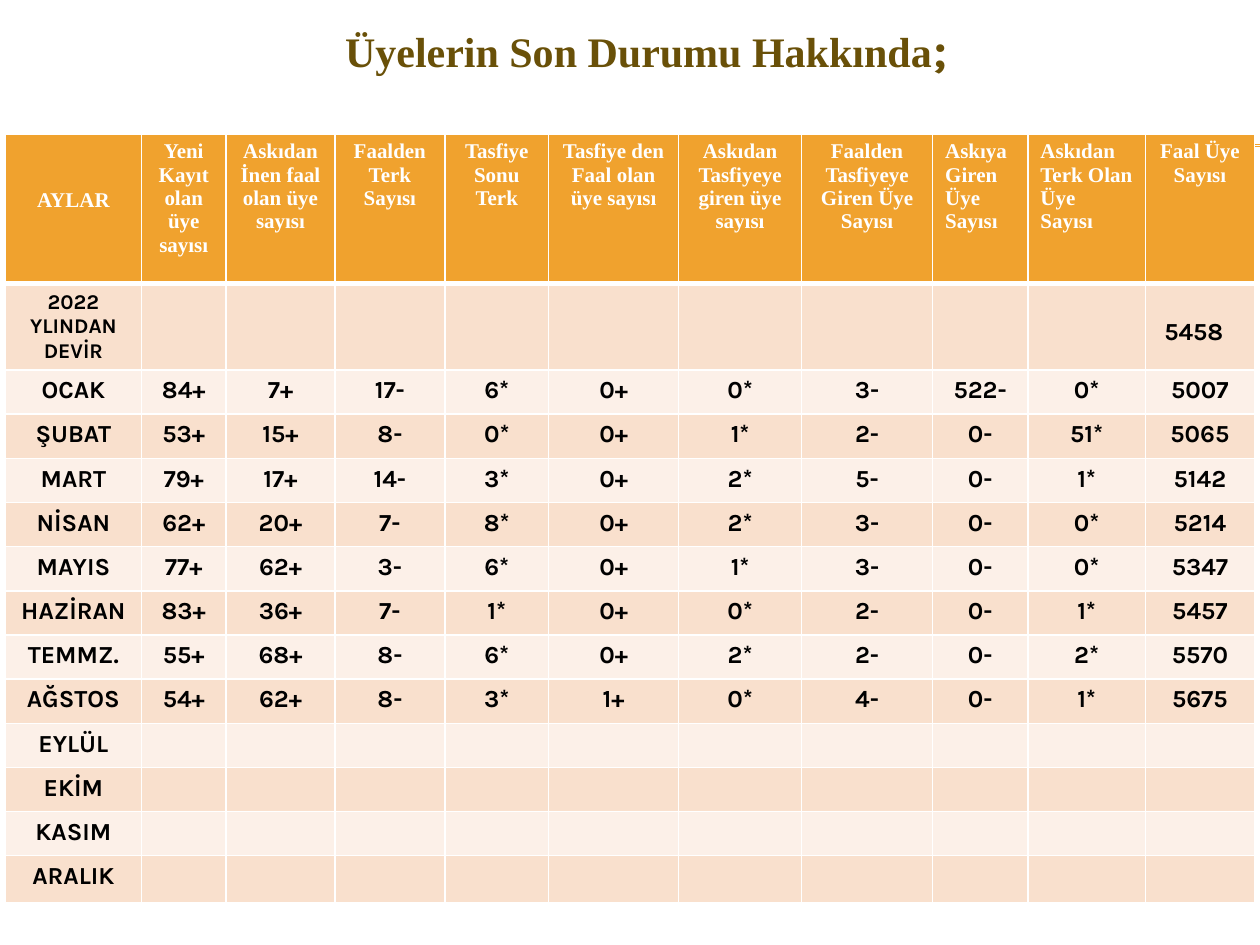
from dataclasses import dataclass
from typing import Optional

import lxml.etree
import pptx
import pptx.dml.color
import pptx.enum.shapes
import pptx.enum.text
import pptx.oxml.ns
import pptx.util

Cm = pptx.util.Cm
Pt = pptx.util.Pt
Align = pptx.enum.text.PP_ALIGN
Anchor = pptx.enum.text.MSO_ANCHOR


@dataclass(frozen=True)
class Theme:
    accent: str = "F0A22E"
    title: str = "695008"
    white: str = "FFFFFF"
    black: str = "000000"
    bands: tuple = ("F9E0CD", "FCF0E8")
    serif: str = "Times New Roman"
    sans: str = "Karla"
    title_size: int = 24
    mark_size: int = 28
    header_size: int = 12
    body_size: int = 14


@dataclass(frozen=True)
class Header:
    text: str
    width: float
    align: Align = Align.CENTER
    margin_top: Optional[float] = None


@dataclass(frozen=True)
class Month:
    name: str
    values: str = ""


THEME = Theme()

HEADERS = [
    Header("AYLAR", 2.74, margin_top=1.1),
    Header("Yeni Kayıt olan üye sayısı", 1.71),
    Header("Askıdan İnen faal olan üye sayısı", 2.19),
    Header("Faalden Terk Sayısı", 2.22),
    Header("Tasfiye Sonu Terk", 2.09),
    Header("Tasfiye den Faal olan üye sayısı", 2.62),
    Header("Askıdan Tasfiyeye giren üye sayısı", 2.48),
    Header("Faalden Tasfiyeye Giren Üye Sayısı", 2.64),
    Header("Askıya Giren Üye Sayısı", 1.92, Align.LEFT),
    Header("Askıdan Terk Olan Üye Sayısı", 2.37, Align.LEFT),
    Header("Faal Üye Sayısı", 2.2),
]

MONTHS = [
    Month("OCAK", "84+ 7+ 17- 6* 0+ 0* 3- 522- 0* 5007"),
    Month("ŞUBAT", "53+ 15+ 8- 0* 0+ 1* 2- 0- 51* 5065"),
    Month("MART", "79+ 17+ 14- 3* 0+ 2* 5- 0- 1* 5142"),
    Month("NİSAN", "62+ 20+ 7- 8* 0+ 2* 3- 0- 0* 5214"),
    Month("MAYIS", "77+ 62+ 3- 6* 0+ 1* 3- 0- 0* 5347"),
    Month("HAZİRAN", "83+ 36+ 7- 1* 0+ 0* 2- 0- 1* 5457"),
    Month("TEMMZ.", "55+ 68+ 8- 6* 0+ 2* 2- 0- 2* 5570"),
    Month("AĞSTOS", "54+ 62+ 8- 3* 1+ 0* 4- 0- 1* 5675"),
    Month("EYLÜL"),
    Month("EKİM"),
    Month("KASIM"),
    Month("ARALIK"),
]

ROW_HEIGHTS = [3.02, 1.74] + [0.89] * (len(MONTHS) - 1) + [0.95]


def color(value: str) -> pptx.dml.color.RGBColor:
    return pptx.dml.color.RGBColor.from_string(value)


def write(paragraph, text: str, *, size: int, font: str, fill: str,
          align: Align = Align.CENTER) -> None:
    paragraph.alignment = align
    run = paragraph.add_run()
    run.text = text
    run.font.size = Pt(size)
    run.font.name = font
    run.font.bold = True
    run.font.color.rgb = color(fill)


def add_rule(slide, top: float) -> None:
    connector = slide.shapes.add_connector(
        pptx.enum.shapes.MSO_CONNECTOR.STRAIGHT, Cm(1.42), Cm(top), Cm(25.4), Cm(top))
    connector.line.color.rgb = color(THEME.accent)
    connector.line.width = Pt(0.75)
    lxml.etree.SubElement(connector._element.spPr, pptx.oxml.ns.qn("a:effectLst"))


def style_cell(cell, fill: str, bottom: float = 1) -> None:
    properties = cell._tc.get_or_add_tcPr()
    for side, width in (("L", 1), ("R", 1), ("T", 1), ("B", bottom)):
        border = lxml.etree.SubElement(
            properties, pptx.oxml.ns.qn(f"a:ln{side}"), w=str(Pt(width)))
        solid = lxml.etree.SubElement(border, pptx.oxml.ns.qn("a:solidFill"))
        lxml.etree.SubElement(solid, pptx.oxml.ns.qn("a:srgbClr"), val=THEME.white)
    cell.fill.solid()
    cell.fill.fore_color.rgb = color(fill)


def fill_header(table) -> None:
    for column, header in enumerate(HEADERS):
        table.columns[column].width = Cm(header.width)
        cell = table.cell(0, column)
        style_cell(cell, THEME.accent, bottom=3)
        if header.margin_top is not None:
            cell.margin_top = Cm(header.margin_top)
        write(cell.text_frame.paragraphs[0], header.text, size=THEME.header_size,
              font=THEME.serif, fill=THEME.white, align=header.align)


def fill_body(table) -> None:
    opening = ["2022 YLINDAN DEVİR"] + [""] * (len(HEADERS) - 2) + ["5458"]
    rows = [opening] + [[month.name] + month.values.split() for month in MONTHS]
    for index, values in enumerate(rows):
        for column in range(len(HEADERS)):
            cell = table.cell(index + 1, column)
            style_cell(cell, THEME.bands[index % 2], bottom=1)
            paragraph = cell.text_frame.paragraphs[0]
            text = values[column] if column < len(values) else ""
            if text:
                is_opening_name = index == 0 and column == 0
                write(paragraph, text, font=THEME.sans, fill=THEME.black,
                      size=THEME.header_size if is_opening_name else THEME.body_size)
            else:
                paragraph.font.size = Pt(THEME.body_size)
    total = table.cell(1, len(HEADERS) - 1)
    total.margin_top = Cm(0.7)
    total.margin_left = Cm(0.38)
    total.text_frame.paragraphs[0].alignment = Align.LEFT


def add_members_table(slide) -> None:
    width = sum(header.width for header in HEADERS)
    frame = slide.shapes.add_table(
        len(ROW_HEIGHTS), len(HEADERS), Cm(0.11), Cm(2.7), Cm(width), Cm(sum(ROW_HEIGHTS)))
    table = frame.table
    for row, height in zip(table.rows, ROW_HEIGHTS):
        row.height = Cm(height)
    fill_header(table)
    fill_body(table)


def add_title(slide) -> None:
    shape = slide.shapes.add_textbox(Cm(1.57), Cm(0), Cm(22.91), Cm(1.93))
    frame = shape.text_frame
    frame.word_wrap = True
    frame.vertical_anchor = Anchor.MIDDLE
    paragraph = frame.paragraphs[0]
    write(paragraph, "Üyelerin Son Durumu Hakkında", size=THEME.title_size,
          font=THEME.serif, fill=THEME.title)
    write(paragraph, ";", size=THEME.mark_size, font=THEME.sans, fill=THEME.title)


def main() -> None:
    presentation = pptx.Presentation()
    presentation.slide_width = Cm(25.4)
    presentation.slide_height = Cm(19.05)
    slide = presentation.slides.add_slide(presentation.slide_layouts[6])
    for top in (2.92, 2.95):
        add_rule(slide, top)
    add_members_table(slide)
    add_title(slide)
    presentation.save("out.pptx")


if __name__ == "__main__":
    main()
